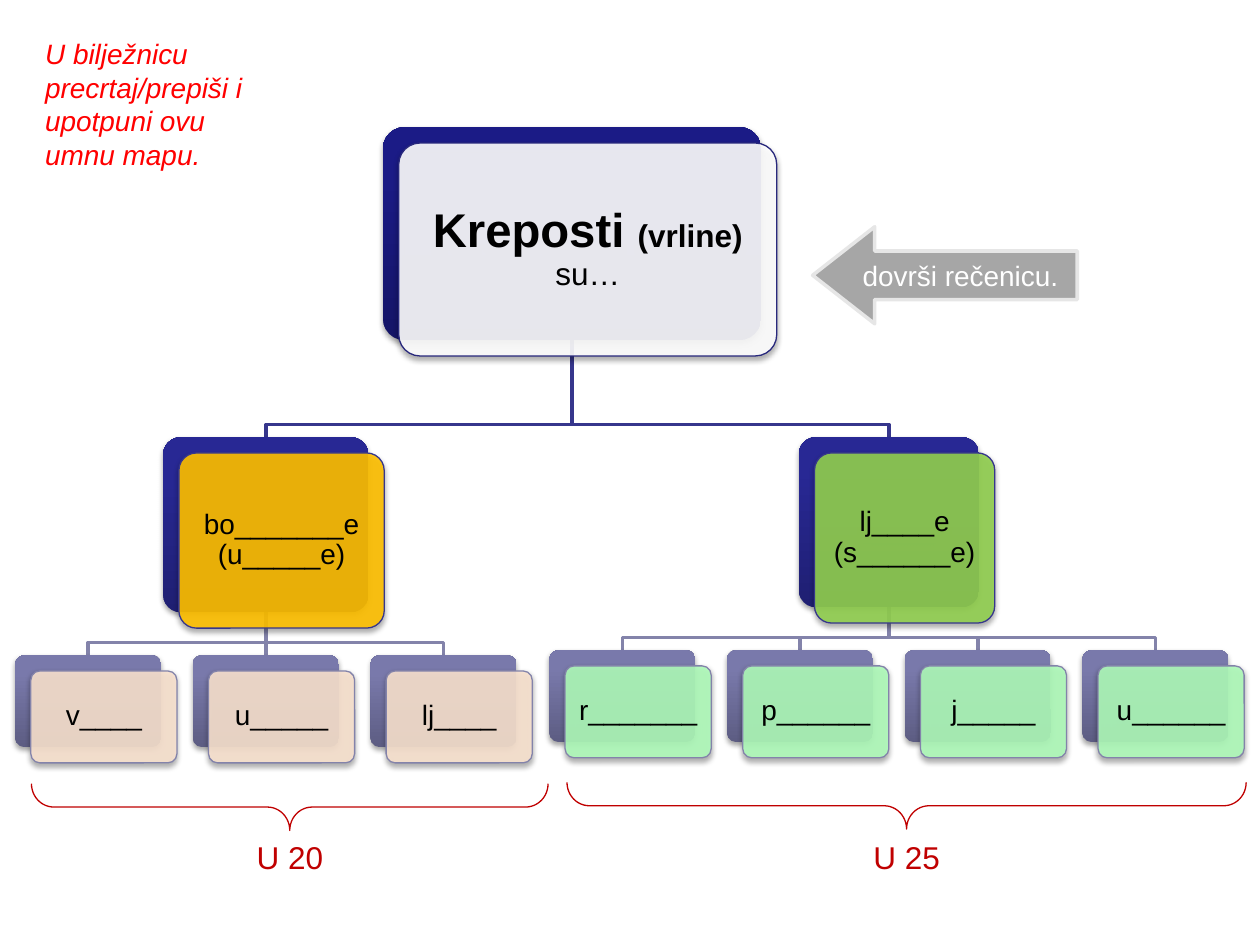
import pptx
import pptx.util
import pptx.dml.color
import pptx.enum.shapes
import pptx.enum.text
import pptx.oxml
import pptx.oxml.ns

Inches, Pt = pptx.util.Inches, pptx.util.Pt
RGB = pptx.dml.color.RGBColor
KIND = pptx.enum.shapes.MSO_SHAPE
ALIGN = pptx.enum.text.PP_ALIGN
MIDDLE = pptx.enum.text.MSO_ANCHOR.MIDDLE
qn = pptx.oxml.ns.qn
NS = pptx.oxml.ns.nsdecls("a")

BLACK, WHITE = RGB(0, 0, 0), RGB(255, 255, 255)
RED, WINE = RGB(255, 0, 0), RGB(0xC0, 0, 0)
GREY, PALE = RGB(0xA6, 0xA6, 0xA6), RGB(0xE6, 0xE6, 0xE6)
GOLD, GREEN = RGB(0xFF, 0xC0, 0), RGB(0x92, 0xD0, 0x50)
PEACH, MINT = RGB(0xF9, 0xE2, 0xCF), RGB(0xAF, 0xFB, 0xBA)
NAVY, INDIGO, LILAC = RGB(0x29, 0x29, 0x7D), RGB(0x36, 0x36, 0x8C), RGB(0x83, 0x83, 0xAA)

# Gradient of the back card, from bottom to top, for each level of the tree
ROOT = (RGB(0x15, 0x15, 0x67), RGB(0x1B, 0x1B, 0x86), RGB(0x19, 0x19, 0x88))
BRANCH = (RGB(0x1F, 0x1F, 0x72), RGB(0x28, 0x28, 0x94), RGB(0x26, 0x26, 0x97))
LEAF = (RGB(0x5D, 0x5D, 0x83), RGB(0x79, 0x79, 0xAB), RGB(0x78, 0x78, 0xAC))

# Tree measures in inches
STEP = 1.41
LEAF_W, LEAF_H = 1.16, 0.73
SHIFT = 0.125
DROP = 0.77
GAP = 0.34
BUS = 0.1


def write(shape, runs, align=ALIGN.CENTER, inset=None, space=None):
    """Fill a shape with (text, size, colour, bold, italic) runs; None breaks the line."""
    frame = shape.text_frame
    frame.word_wrap = True
    if inset is not None:
        frame.margin_left = frame.margin_right = Inches(inset)
        frame.margin_top = frame.margin_bottom = Inches(inset)
    par = frame.paragraphs[0]
    par.alignment = align
    if space:
        par.line_spacing = space
    for item in runs:
        if item is None:
            par.add_line_break()
            continue
        text, size, color, bold, slant = item
        run = par.add_run()
        run.text = text
        font = run.font
        font.name, font.size = "Arial", Pt(size)
        font.bold, font.italic = bold, slant
        font.color.rgb = color


def label(slide, box, runs, align=ALIGN.CENTER):
    write(slide.shapes.add_textbox(*map(Inches, box)), runs, align)


def plain(text, size=16, color=BLACK, bold=False, slant=False):
    return (text, size, color, bold, slant)


def shape(slide, kind, box, line=None, width=0.75):
    item = slide.shapes.add_shape(kind, *map(Inches, box))
    item.shadow.inherit = False
    item.fill.background()
    if line is None:
        item.line.fill.background()
    else:
        item.line.color.rgb = line
        item.line.width = Pt(width)
    return item


def shade(item):
    """Soft shadow straight below the shape."""
    effect = item._element.spPr.find(qn("a:effectLst"))
    effect.append(pptx.oxml.parse_xml(
        f'<a:outerShdw {NS} blurRad="{Pt(3.1)}" dist="{Pt(1.8)}" dir="5400000" '
        'rotWithShape="0"><a:srgbClr val="000000"><a:alpha val="35000"/>'
        '</a:srgbClr></a:outerShdw>'))


def blend(item, colors):
    """Three-stop gradient running upwards."""
    stops = "".join(f'<a:gs pos="{pos}000"><a:srgbClr val="{color}"/></a:gs>'
                    for pos, color in zip((0, 80, 100), colors))
    blank = item._element.spPr.find(qn("a:noFill"))
    blank.getparent().replace(blank, pptx.oxml.parse_xml(
        f'<a:gradFill {NS} rotWithShape="1"><a:gsLst>{stops}</a:gsLst>'
        '<a:lin ang="16200000" scaled="0"/></a:gradFill>'))


def card(slide, box, tones, fill, line, runs, inset=0.09):
    """Dark back card with a nearly opaque text card shifted over it."""
    left, top, wide, high = box
    back = shape(slide, KIND.ROUNDED_RECTANGLE, box)
    blend(back, tones)
    front = shape(slide, KIND.ROUNDED_RECTANGLE,
                  (left + SHIFT, top + SHIFT, wide, high), line)
    front.fill.solid()
    front.fill.fore_color.rgb = fill
    tint = front._element.spPr.find(qn("a:solidFill"))[0]
    tint.append(pptx.oxml.parse_xml(f'<a:alpha {NS} val="90000"/>'))
    for item in (back, front):
        item.adjustments[0] = 0.1
        shade(item)
    front.text_frame.vertical_anchor = MIDDLE
    write(front, runs, inset=inset, space=0.9)


def link(slide, start, end, color):
    """Line down from a parent, along the bus and down to a child."""
    (x, y), (to_x, to_y) = start, end
    if abs(x - to_x) < 0.01:
        item = slide.shapes.add_connector(
            pptx.enum.shapes.MSO_CONNECTOR.STRAIGHT, *map(Inches, (x, y, x, to_y)))
        item._element.spPr.append(pptx.oxml.parse_xml(f"<a:effectLst {NS}/>"))
    else:
        turn = to_y - BUS
        pen = slide.shapes.build_freeform(Inches(x), Inches(y))
        pen.add_line_segments([(Inches(a), Inches(b)) for a, b in
                               ((x, turn), (to_x, turn), (to_x, to_y))], close=False)
        item = pen.convert_to_shape()
        item.fill.background()
        item.shadow.inherit = False
    item.line.color.rgb = color
    item.line.width = Pt(2)


def brace(slide, left, top, wide, text):
    """Brace opening upwards, with its caption below the tip."""
    high = 0.37
    mid = left + wide / 2
    item = shape(slide, KIND.LEFT_BRACE,
                 (mid - high / 2, top + high / 2 - wide / 2, high, wide), WINE)
    item.rotation = 270
    item.adjustments[0] = 0.48
    label(slide, (mid - 0.51, 6.6, 1.02, 0.4), [plain(text, 18, WINE)])


def tree(slide, root, branches):
    left, top, wide, high = root
    trunk = (left + wide / 2, top + high)
    level = top + high + DROP
    cards = []
    # Lines first, so that the cards cover their ends
    for start, (w, h), fill, text, tint, words in branches:
        mid = start + (LEAF_W + STEP * (len(words) - 1)) / 2
        low = level + h
        link(slide, trunk, (mid, level), INDIGO)
        cards.append(((mid - w / 2, level, w, h), BRANCH, fill, INDIGO, [plain(text)]))
        for i, word in enumerate(words):
            x = start + i * STEP
            link(slide, (mid, low), (x + LEAF_W / 2, low + GAP), LILAC)
            cards.append(((x, low + GAP, LEAF_W, LEAF_H), LEAF, tint, LILAC,
                          [plain(word)]))
    card(slide, root, ROOT, WHITE, NAVY,
         [plain("Kreposti ", 27, bold=True), plain("(vrline)", 18, bold=True),
          None, plain("su…", 18)], inset=0.16)
    for item in cards:
        card(slide, *item)


def main():
    deck = pptx.Presentation()
    deck.slide_width, deck.slide_height = Inches(10), Inches(7.5)
    slide = deck.slides.add_slide(deck.slide_layouts[6])

    # Mind map
    tree(slide, (3.04, 1.01, 3, 1.69), (
        (0.12, (1.63, 1.39), GOLD, "bo_______e (u_____e)", PEACH,
         ("v____", "u_____", "lj____")),
        (4.36, (1.43, 1.35), GREEN, "lj____e (s______e)", MINT,
         ("r_______", "p______", "j_____", "u______"))))

    # Lesson braces
    brace(slide, 0.25, 6.22, 4.1, "U 20")
    brace(slide, 4.5, 6.21, 5.39, "U 25")

    # Instructions
    label(slide, (0.26, 0.24, 1.91, 1.18),
          [plain("U bilježnicu precrtaj/prepiši i upotpuni ovu umnu mapu.",
                 color=RED, slant=True)], ALIGN.LEFT)
    arrow = shape(slide, KIND.LEFT_ARROW, (6.45, 1.8, 2.1, 0.77), PALE, 2)
    arrow.adjustments[1] = 0.64
    arrow.fill.solid()
    arrow.fill.fore_color.rgb = GREY
    arrow.text_frame.vertical_anchor = MIDDLE
    write(arrow, [plain("dovrši rečenicu.", color=WHITE)])

    deck.save("out.pptx")


if __name__ == "__main__":
    main()
